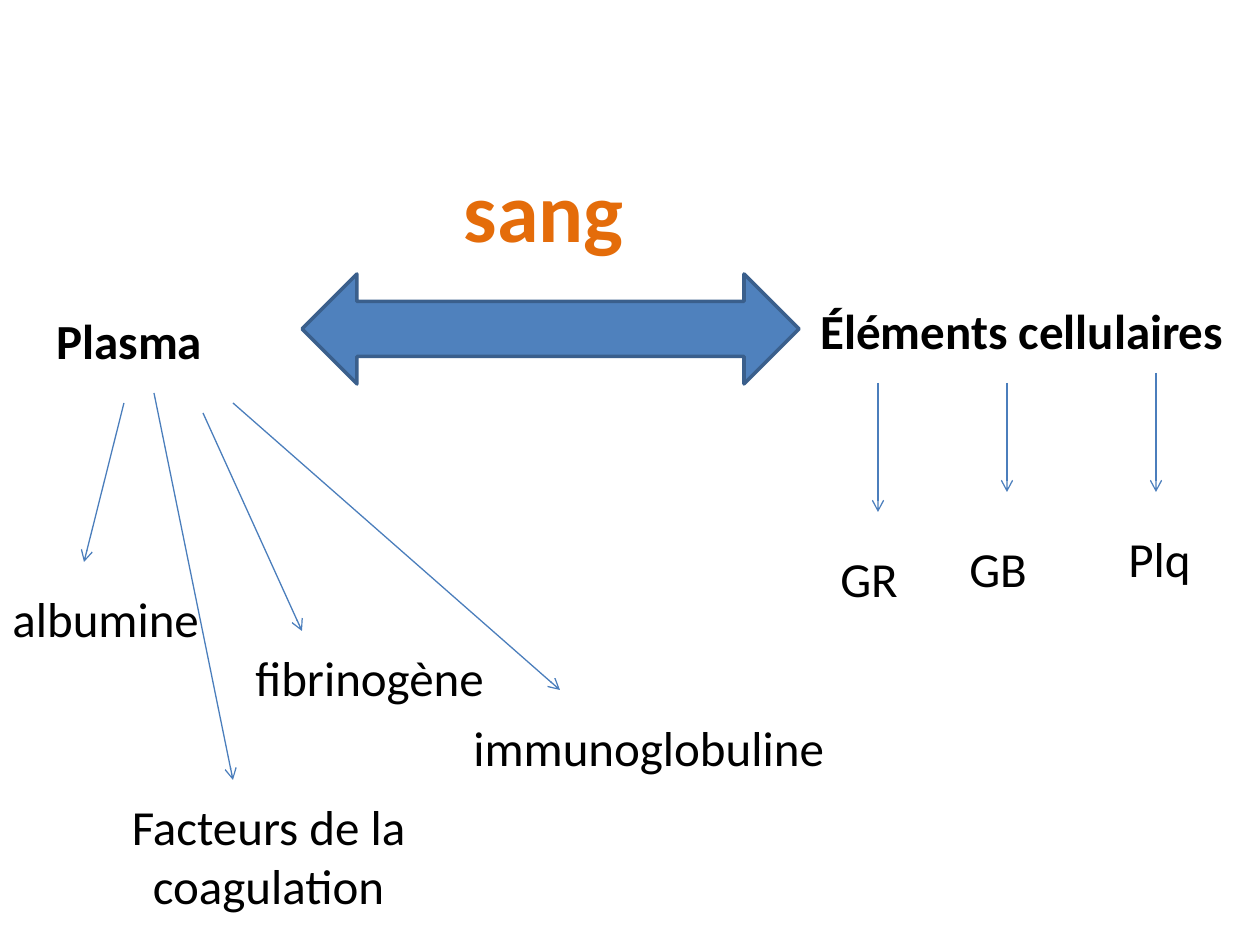
from lxml import etree
from pptx import Presentation
from pptx import util as u
from pptx.dml.color import RGBColor
from pptx.enum import shapes, text
from pptx.oxml.ns import qn

SCALE = 914400 / 126  # EMU in one px
WHITE = RGBColor(0xFF, 0xFF, 0xFF)
BLACK = RGBColor(0x00, 0x00, 0x00)
ORANGE = RGBColor(0xE4, 0x6C, 0x0A)
BLUE = RGBColor(0x4F, 0x81, 0xBD)
DARK_BLUE = RGBColor(0x3A, 0x5F, 0x8C)
LINE_BLUE = RGBColor(0x4B, 0x7E, 0xBC)

LABEL_HEIGHT = 72


def px(*lengths):
    return [u.Emu(round(length * SCALE)) for length in lengths]


class Diagram:
    """Holds the style and the slide being drawn."""

    font_format = {"name": "Calibri", "size": u.Pt(28), "bold": False}

    def __init__(self, slide):
        self.slide = slide

    def set_text(self, shape, wording, color=BLACK, align=text.PP_ALIGN.LEFT, **changes):
        frame = shape.text_frame
        frame.word_wrap = True
        frame.auto_size = text.MSO_AUTO_SIZE.NONE
        frame.text = wording
        paragraph = frame.paragraphs[0]
        paragraph.alignment = align
        font = paragraph.runs[0].font
        for name, value in {**self.font_format, **changes}.items():
            setattr(font, name, value)
        font.color.rgb = color

    def paint(self, shape, fill, line):
        shape.fill.solid()
        shape.fill.fore_color.rgb = fill
        shape.line.color.rgb = line
        shape.line.width = u.Pt(2)

    def title(self, wording, *box):
        shape = self.slide.shapes.title
        for name, value in zip(("left", "top", "width", "height"), px(*box)):
            setattr(shape, name, value)
        self.paint(shape, WHITE, WHITE)
        shape.text_frame.vertical_anchor = text.MSO_ANCHOR.BOTTOM
        self.set_text(shape, wording, ORANGE, size=u.Pt(48), bold=True)

    def label(self, wording, left, top, width, height=LABEL_HEIGHT, **changes):
        shape = self.slide.shapes.add_textbox(*px(left, top, width, height))
        self.set_text(shape, wording, **changes)

    def double_arrow(self, *box):
        kind = shapes.MSO_SHAPE.LEFT_RIGHT_ARROW
        shape = self.slide.shapes.add_shape(kind, *px(*box))
        shape.shadow.inherit = False
        self.paint(shape, BLUE, DARK_BLUE)

    def arrow(self, *ends):
        kind = shapes.MSO_CONNECTOR.STRAIGHT
        connector = self.slide.shapes.add_connector(kind, *px(*ends))
        connector.line.color.rgb = LINE_BLUE
        connector.line.width = u.Pt(0.75)
        properties = connector._element.spPr
        head = etree.SubElement(properties.get_or_add_ln(), qn("a:tailEnd"))
        head.set("type", "arrow")
        etree.SubElement(properties, qn("a:effectLst"))


def main():
    presentation = Presentation()
    presentation.slide_width, presentation.slide_height = px(1260, 945)
    title_only = presentation.slide_layouts[5]
    diagram = Diagram(presentation.slides.add_slide(title_only))

    # Blood and its two parts
    diagram.title("sang", 451, 76, 189, 190)
    diagram.double_arrow(302, 274, 497, 110)
    diagram.label("Plasma", 44, 304, 218, bold=True)
    diagram.label("Éléments cellulaires", 808, 294, 452, bold=True)

    # Components of plasma and of the cells
    diagram.label("Facteurs de la coagulation", 95, 790, 347, 131,
                  align=text.PP_ALIGN.CENTER)
    for wording, left, top, width in (
        ("albumine", 0, 582, 243),
        ("fibrinogène", 243, 641, 268),
        ("immunoglobuline", 461, 711, 390),
        ("GR", 828, 542, 100),
        ("GB", 957, 532, 100),
        ("Plq", 1116, 522, 95),
    ):
        diagram.label(wording, left, top, width)

    # Arrows from plasma
    for ends in (
        (124, 403, 84, 562),
        (154, 393, 233, 780),
        (203, 413, 302, 631),
        (233, 403, 560, 690),
    ):
        diagram.arrow(*ends)

    # Vertical arrows from the cells
    for x, top, bottom in ((878, 383, 512), (1007, 383, 492), (1156, 373, 492)):
        diagram.arrow(x, top, x, bottom)

    presentation.save("out.pptx")


if __name__ == "__main__":
    main()
